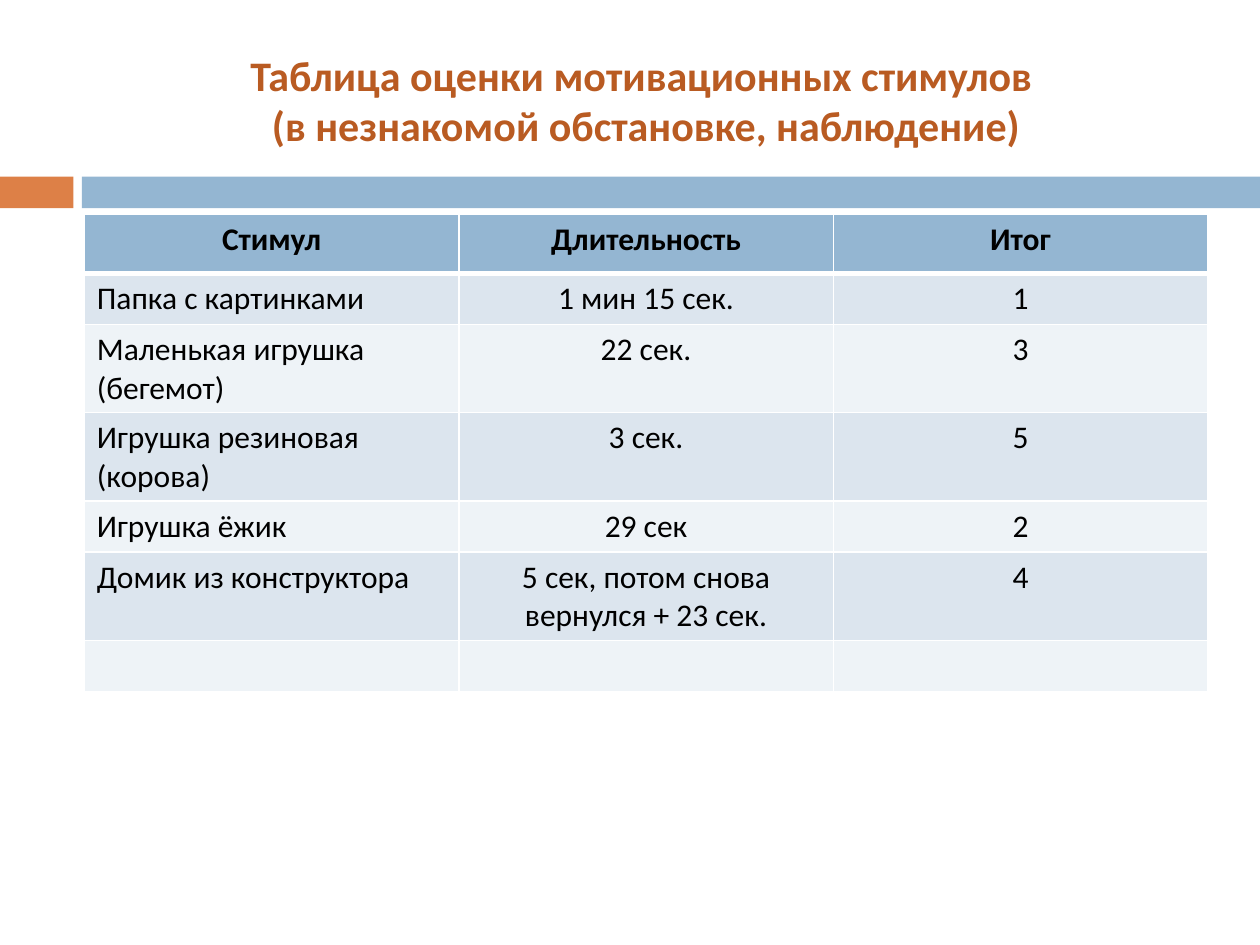
from dataclasses import dataclass

from lxml import etree
from pptx import Presentation
from pptx.dml.color import RGBColor
from pptx.enum.shapes import MSO_SHAPE
from pptx.enum.text import MSO_ANCHOR, PP_ALIGN
from pptx.oxml.ns import qn
from pptx.util import Cm, Pt

RECT = MSO_SHAPE.RECTANGLE
MIDDLE = MSO_ANCHOR.MIDDLE
LEFT, CENTER = PP_ALIGN.LEFT, PP_ALIGN.CENTER


@dataclass(frozen=True)
class Theme:
    """Colours, font and type sizes of the slide."""
    font: str = "Calibri"
    title: str = "B95B22"
    text: str = "000000"
    accent: str = "DD8047"
    head: str = "94B6D2"
    bands: tuple = ("DCE5EE", "EEF3F7")
    rule: str = "FFFFFF"
    big: int = 24
    body: int = 18
    thin: int = 1
    thick: int = 3


THEME = Theme()

TITLE = (
    "Таблица оценки мотивационных стимулов ",
    "(в незнакомой обстановке, наблюдение)",
)
ROWS = (
    ("Стимул", "Длительность", "Итог"),
    ("Папка с картинками", "1 мин 15 сек.", "1"),
    ("Маленькая игрушка (бегемот)", "22 сек.", "3"),
    ("Игрушка резиновая (корова)", "3 сек.", "5"),
    ("Игрушка ёжик", "29 сек", "2"),
    ("Домик из конструктора", "5 сек, потом снова вернулся + 23 сек.", "4"),
    ("", "", ""),
)


def add_run(para, text, size, color, bold):
    """Add one styled run to a paragraph."""
    run = para.add_run()
    run.text = text
    font = run.font
    font.name, font.size, font.bold = THEME.font, Pt(size), bold
    font.color.rgb = RGBColor.from_string(color)


def add_bar(slide, left, top, width, height, color):
    """Add a plain filled bar."""
    bar = slide.shapes.add_shape(RECT, left, top, width, height)
    bar.shadow.inherit = False
    bar.fill.solid()
    bar.fill.fore_color.rgb = RGBColor.from_string(color)
    bar.line.fill.background()


def add_strip(slide, left, top, width, height):
    """Add the short accent bar and the long bar beside it."""
    short, gap = Cm(1.48), Cm(0.17)
    start = short + gap
    add_bar(slide, left, top, short, height, THEME.accent)
    add_bar(slide, left + start, top, width - start, height, THEME.head)


def add_title(slide, left, top, width, height):
    """Add the centred two-line title."""
    frame = slide.shapes.add_textbox(left, top, width, height).text_frame
    frame.word_wrap = True
    frame.vertical_anchor = MIDDLE
    para = frame.paragraphs[0]
    para.alignment = CENTER
    for index, line in enumerate(TITLE):
        if index:
            para.add_line_break()
        add_run(para, line, THEME.big, THEME.title, True)


def set_edges(cell, top, bottom):
    """Draw the four cell borders."""
    props = cell._tc.get_or_add_tcPr()
    sides = (("L", THEME.thin), ("R", THEME.thin), ("T", top), ("B", bottom))
    for side, size in sides:
        line = etree.SubElement(props, qn(f"a:ln{side}"), w=str(Pt(size)))
        fill = etree.SubElement(line, qn("a:solidFill"))
        etree.SubElement(fill, qn("a:srgbClr"), val=THEME.rule)


def fill_cell(cell, text, row, col):
    """Style one cell by its place in the grid and write its text."""
    head = row == 0
    top = THEME.thick if row == 1 else THEME.thin
    set_edges(cell, top, THEME.thick if head else THEME.thin)
    color = THEME.head if head else THEME.bands[(row - 1) % 2]
    cell.fill.solid()
    cell.fill.fore_color.rgb = RGBColor.from_string(color)
    para = cell.text_frame.paragraphs[0]
    para.alignment = CENTER if head or col else LEFT
    if text:
        add_run(para, text, THEME.body, THEME.text, head)


def add_grid(slide, left, top, width):
    """Add the table of stimuli with equal columns."""
    first, other = Cm(1.19), Cm(1.03)
    count = len(ROWS[0])
    height = first + other * (len(ROWS) - 1)
    frame = slide.shapes.add_table(len(ROWS), count, left, top, width, height)
    table = frame.table
    for col in table.columns:
        col.width = width // count
    for row, texts in enumerate(ROWS):
        table.rows[row].height = other if row else first
        for col, text in enumerate(texts):
            fill_cell(table.cell(row, col), text, row, col)


def main():
    """Build and save the slide."""
    deck = Presentation()
    deck.slide_width, deck.slide_height = Cm(25.4), Cm(19.05)
    slide = deck.slides.add_slide(deck.slide_layouts[6])
    left, width = Cm(1.7), Cm(22.65)
    add_strip(slide, 0, Cm(3.56), deck.slide_width, Cm(0.64))
    add_title(slide, left, Cm(0.64), width, Cm(2.74))
    add_grid(slide, left, Cm(4.32), width)
    deck.save("out.pptx")


if __name__ == "__main__":
    main()
